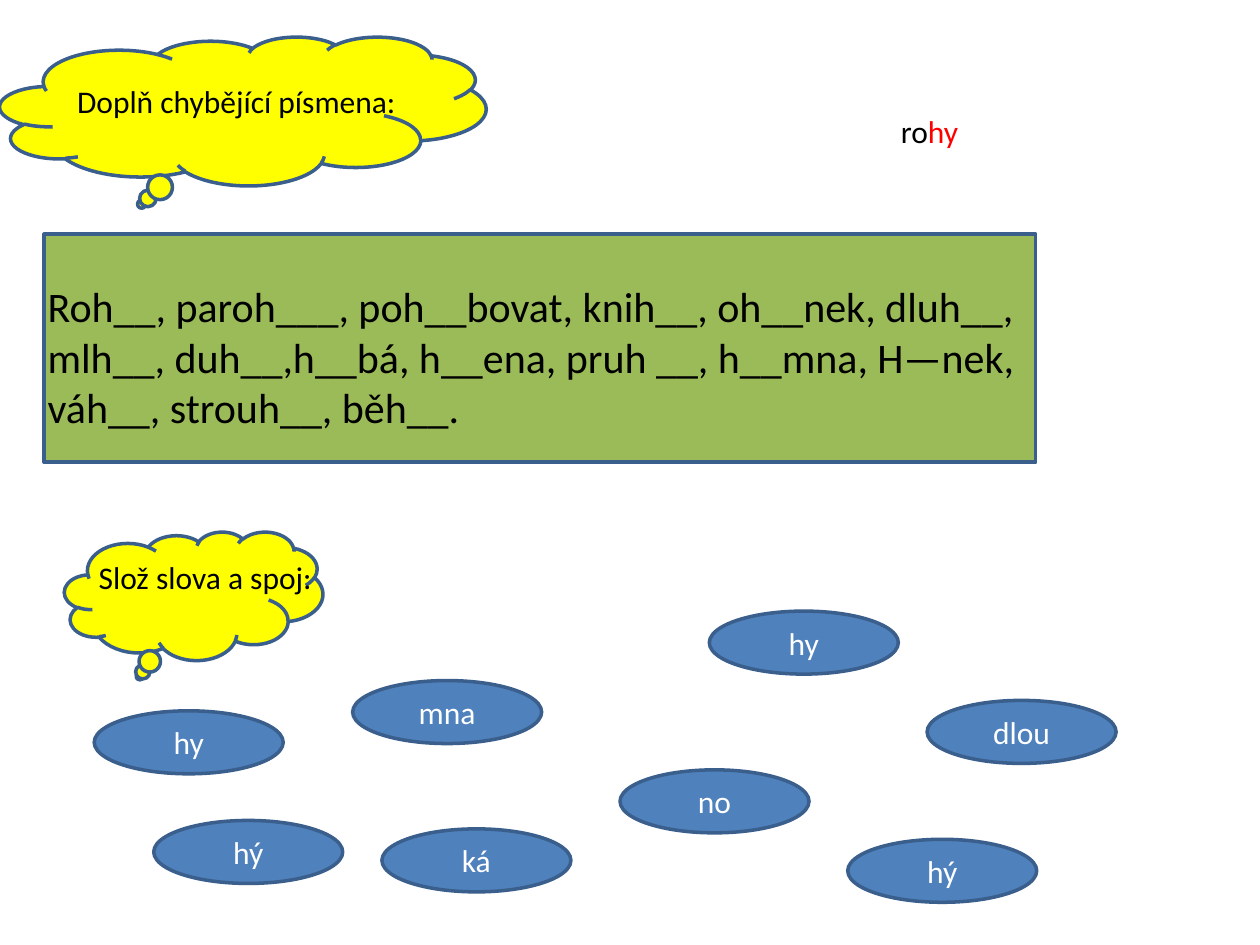
"""Build a Czech spelling worksheet slide with missing letters and syllables to join."""
from pptx import Presentation
from pptx.dml.color import RGBColor
from pptx.enum.shapes import MSO_SHAPE as Shape
from pptx.enum.text import MSO_ANCHOR as Anchor, MSO_AUTO_SIZE as AutoSize, PP_ALIGN as Align
from pptx.util import Cm, Pt

BLACK = RGBColor(0x00, 0x00, 0x00)
WHITE = RGBColor(0xFF, 0xFF, 0xFF)
RED = RGBColor(0xFF, 0x00, 0x00)
YELLOW = RGBColor(0xFF, 0xFF, 0x00)
GREEN = RGBColor(0x9B, 0xBB, 0x59)
BLUE = RGBColor(0x4F, 0x81, 0xBD)
OUTLINE = RGBColor(0x3A, 0x5F, 0x8C)

PANELS = [
    (Shape.CLOUD_CALLOUT, (1.3, 10.72, 5.21, 2.59), YELLOW),
    (Shape.RECTANGLE, (0.89, 4.72, 19.99, 4.6), GREEN),
    (Shape.CLOUD_CALLOUT, (0, 0.74, 9.8, 3), YELLOW),
]
HEADING = "Doplň chybějící písmena:"
HEADING_BOX = (1.3, 1.52, 18.39, 1.02)
EXERCISE = (
    "Roh__, paroh___, poh__bovat, knih__, oh__nek, dluh__, mlh__, duh__,h__bá, "
    "h__ena, pruh __, h__mna, H—nek, váh__, strouh__, běh__."
)
TEXTS = [
    ((0.71, 5.54, 20.19, 3.32), 24, [(EXERCISE, BLACK)]),
    ((1.74, 11.13, 10.55, 1.02), 18, [("Slož slova a spoj:", BLACK)]),
    ((17.91, 2.13, 3.4, 1.02), 18, [("ro", BLACK), ("hy", RED)]),
]
SYLLABLE_SIZE = (3.81, 1.27)
SYLLABLES = [
    ("ká", 7.7, 16.71),
    ("hý", 3.1, 16.54),
    ("hy", 1.9, 14.33),
    ("hy", 14.3, 12.32),
    ("dlou", 18.69, 14.12),
    ("mna", 7.11, 13.72),
    ("no", 12.5, 15.52),
    ("hý", 17.09, 16.92),
]


def lengths(box):
    return [Cm(value) for value in box]


def write(frame, runs, size, align=Align.LEFT, anchor=Anchor.TOP):
    frame.word_wrap = True
    frame.auto_size = AutoSize.NONE
    frame.vertical_anchor = anchor
    paragraph = frame.paragraphs[0]
    paragraph.alignment = align
    for words, color in runs:
        run = paragraph.add_run()
        run.text = words
        run.font.name = "Calibri"
        run.font.size = Pt(size)
        run.font.color.rgb = color


def add_panel(slide, kind, box, color):
    panel = slide.shapes.add_shape(kind, *lengths(box))
    panel.shadow.inherit = False
    panel.fill.solid()
    panel.fill.fore_color.rgb = color
    panel.line.color.rgb = OUTLINE
    panel.line.width = Pt(2)
    return panel


def main():
    deck = Presentation()
    deck.slide_width, deck.slide_height = lengths((25.4, 19.05))
    slide = deck.slides.add_slide(deck.slide_layouts[5])

    for kind, box, color in PANELS:
        add_panel(slide, kind, box, color)

    heading = slide.shapes.title
    heading.left, heading.top, heading.width, heading.height = lengths(HEADING_BOX)
    write(heading.text_frame, [(HEADING, BLACK)], 18)
    slide.shapes._spTree.append(heading._element)

    for box, size, runs in TEXTS:
        write(slide.shapes.add_textbox(*lengths(box)).text_frame, runs, size)

    for syllable, left, top in SYLLABLES:
        oval = add_panel(slide, Shape.FLOWCHART_CONNECTOR, (left, top, *SYLLABLE_SIZE), BLUE)
        write(oval.text_frame, [(syllable, WHITE)], 18, Align.CENTER, Anchor.MIDDLE)

    deck.save("out.pptx")


if __name__ == "__main__":
    main()
